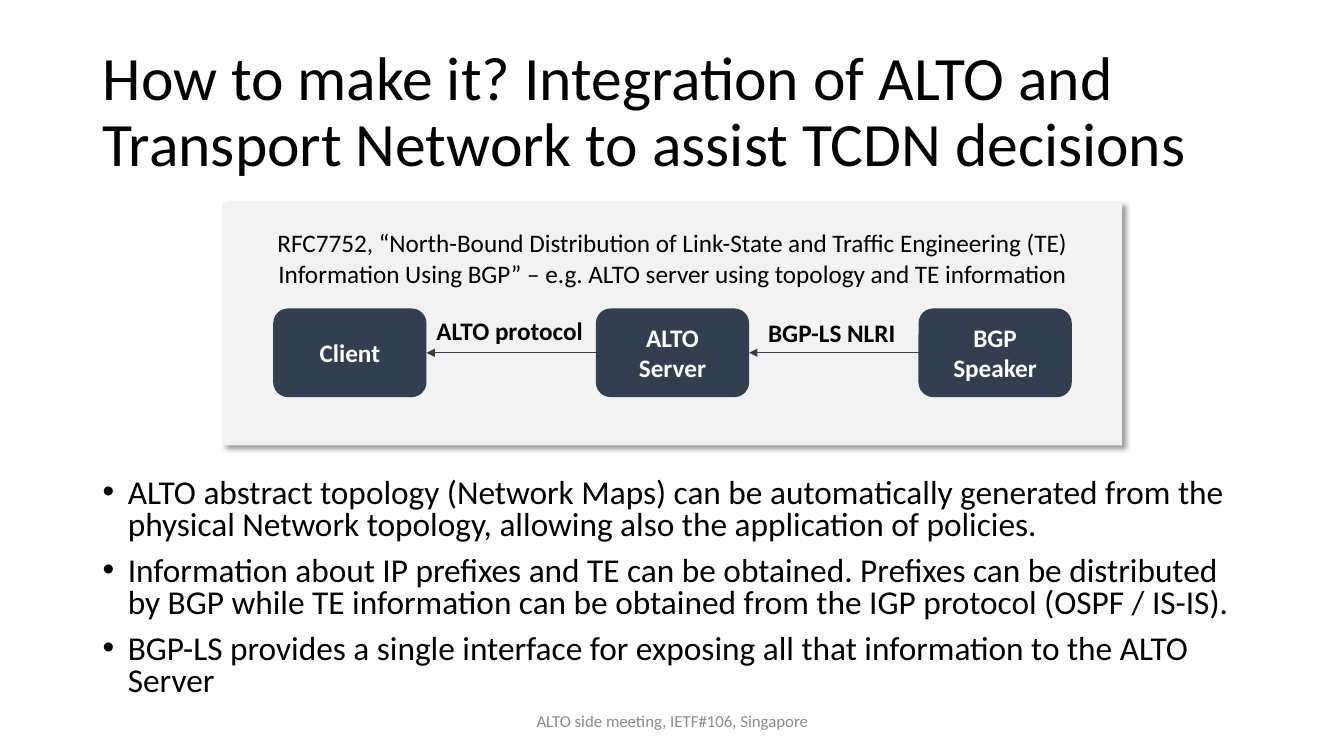
from lxml.etree import SubElement
from pptx import Presentation
from pptx.dml.color import RGBColor
from pptx.enum.shapes import MSO_CONNECTOR, MSO_SHAPE
from pptx.enum.text import MSO_ANCHOR, PP_ALIGN
from pptx.oxml import parse_xml
from pptx.oxml.ns import nsdecls, qn
from pptx.util import Inches, Pt

BLACK = RGBColor(0x00, 0x00, 0x00)
WHITE = RGBColor(0xFF, 0xFF, 0xFF)
NAVY = RGBColor(0x33, 0x3F, 0x50)
PANEL_GREY = RGBColor(0xF2, 0xF2, 0xF2)
FOOTER_GREY = RGBColor(0x8C, 0x8C, 0x8C)

CELL = 0.1  # inches per grid column and row


def grid(*cells):
    return [Inches(count * CELL) for count in cells]


class SlideBuilder:
    font_name = "Calibri"

    def __init__(self, presentation):
        self.slide = presentation.slides.add_slide(presentation.slide_layouts[6])

    def fill_text(self, shape, paragraphs, size, color=BLACK, bold=False,
                  anchor=MSO_ANCHOR.TOP, wrap=True, **paragraph_format):
        frame = shape.text_frame
        frame.word_wrap = wrap
        frame.vertical_anchor = anchor
        frame.text = "\n".join(paragraphs)
        font_format = {"name": self.font_name, "size": Pt(size), "bold": bold}
        for paragraph in frame.paragraphs:
            for name, value in paragraph_format.items():
                setattr(paragraph, name, value)
            font = paragraph.runs[0].font
            for name, value in font_format.items():
                setattr(font, name, value)
            font.color.rgb = color
        return frame

    def text(self, box, paragraphs, size, **text_format):
        shape = self.slide.shapes.add_textbox(*grid(*box))
        return self.fill_text(shape, paragraphs, size, **text_format)

    def bullets(self, box, paragraphs, size):
        frame = self.text(box, paragraphs, size, line_spacing=0.8, space_before=Pt(10))
        for paragraph in frame.paragraphs:
            properties = paragraph._p.get_or_add_pPr()
            properties.set("marL", str(Inches(0.25)))
            properties.set("indent", str(Inches(-0.25)))
            SubElement(properties, qn("a:buFont"), typeface="Arial")
            SubElement(properties, qn("a:buChar"), char="•")

    def shape(self, kind, box, fill):
        shape = self.slide.shapes.add_shape(kind, *grid(*box))
        shape.shadow.inherit = False
        shape.fill.solid()
        shape.fill.fore_color.rgb = fill
        shape.line.fill.background()
        return shape

    def panel(self, box):
        shape = self.shape(MSO_SHAPE.RECTANGLE, box, PANEL_GREY)
        effects = shape._element.spPr.find(qn("a:effectLst"))
        effects.append(parse_xml(
            f'<a:outerShdw {nsdecls("a")} blurRad="{Pt(4)}" dist="{Pt(3)}" '
            'dir="2700000" algn="tl" rotWithShape="0"><a:srgbClr val="000000">'
            '<a:alpha val="40000"/></a:srgbClr></a:outerShdw>'))

    def node(self, box, label):
        shape = self.shape(MSO_SHAPE.ROUNDED_RECTANGLE, box, NAVY)
        self.fill_text(shape, [label], 18, color=WHITE, bold=True,
                       anchor=MSO_ANCHOR.MIDDLE, alignment=PP_ALIGN.CENTER)

    def arrow(self, start, end, row):
        connector = self.slide.shapes.add_connector(
            MSO_CONNECTOR.STRAIGHT, *grid(start, row, end, row))
        connector.line.color.rgb = NAVY
        connector.line.width = Pt(0.5)
        properties = connector._element.spPr
        SubElement(properties.find(qn("a:ln")), qn("a:tailEnd"), type="triangle")
        SubElement(properties, qn("a:effectLst"))


def main():
    presentation = Presentation()
    presentation.slide_width = Inches(13.33)
    presentation.slide_height = Inches(7.5)
    builder = SlideBuilder(presentation)

    # Title and bullets
    builder.text(
        (9.2, 4, 115, 14.5),
        ["How to make it? Integration of ALTO and Transport Network to assist TCDN decisions"],
        44, anchor=MSO_ANCHOR.MIDDLE, line_spacing=0.9)
    builder.bullets((9.2, 47, 115, 26), [
        "ALTO abstract topology (Network Maps) can be automatically generated from the "
        "physical Network topology, allowing also the application of policies.",
        "Information about IP prefixes and TE can be obtained. Prefixes can be distributed "
        "by BGP while TE information can be obtained from the IGP protocol (OSPF / IS-IS).",
        "BGP-LS provides a single interface for exposing all that information to the ALTO Server",
    ], 23.8)

    # Diagram panel with its heading
    builder.panel((22.1, 20.1, 89.2, 24.1))
    builder.text(
        (22.1, 22.1, 89.2, 7.1),
        ["RFC7752, “North-Bound Distribution of Link-State and Traffic Engineering (TE) "
         "Information Using BGP” – e.g. ALTO server using topology and TE information"],
        18, alignment=PP_ALIGN.CENTER)

    # Nodes at an equal pitch, each arrow pointing back to the node before
    first, pitch, width, top, height = 27.1, 32, 15.2, 30.6, 8.8
    for index, label in enumerate(["Client", "ALTO Server", "BGP Speaker"]):
        left = first + index * pitch
        builder.node((left, top, width, height), label)
        if index:
            builder.arrow(left, left - pitch + width, top + height / 2)

    # Protocol names above the arrows
    for box, label in [((42.3, 30.8, 16.7, 4), "ALTO protocol"),
                       ((75.2, 31, 14.8, 4), "BGP-LS NLRI")]:
        builder.text(box, [label], 18, bold=True, wrap=False)

    # Footer
    builder.text((44.2, 69.5, 45, 4), ["ALTO side meeting, IETF#106, Singapore"], 12,
                 color=FOOTER_GREY, anchor=MSO_ANCHOR.MIDDLE, alignment=PP_ALIGN.CENTER)

    presentation.save("out.pptx")


if __name__ == "__main__":
    main()
